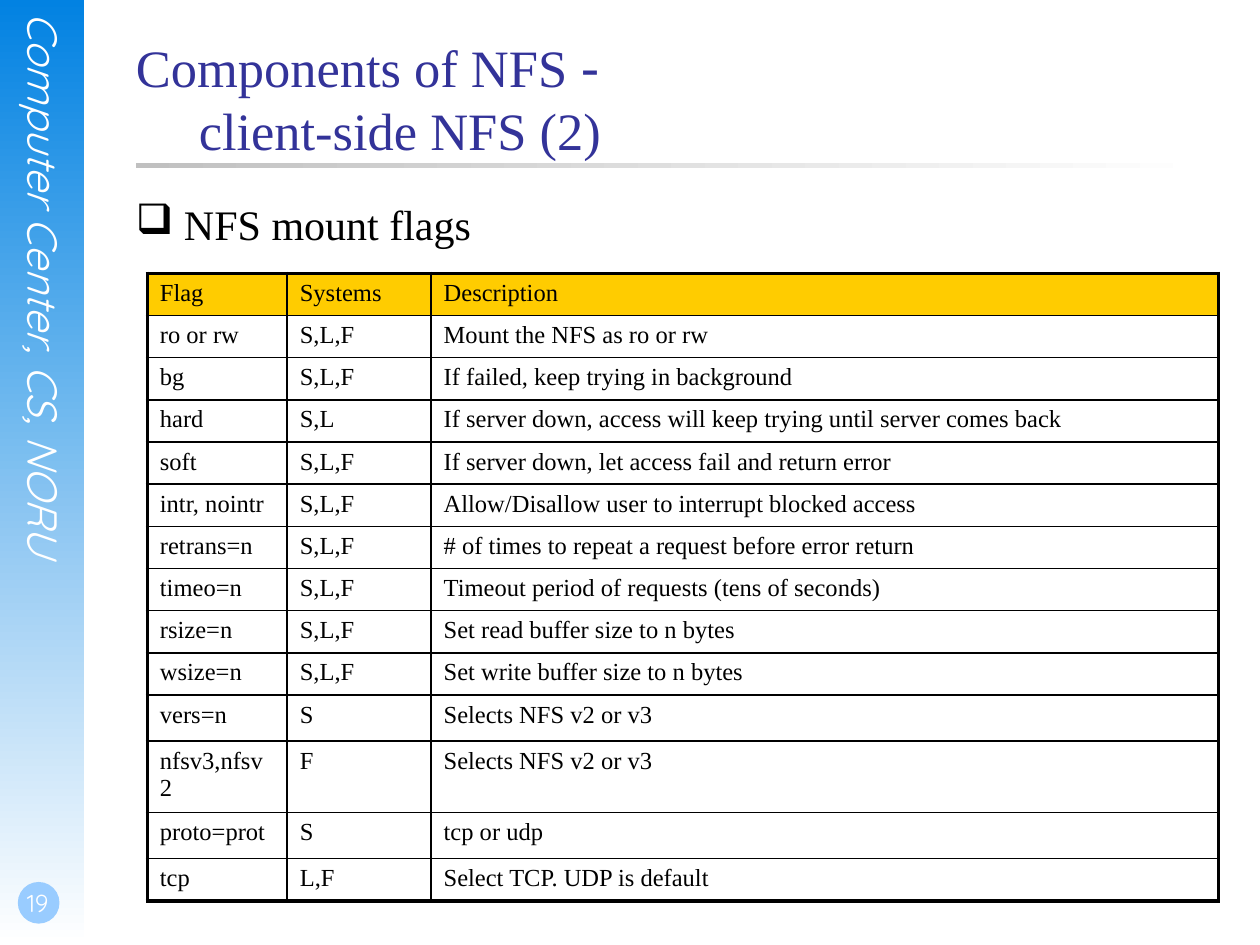
from lxml import etree
from pptx import Presentation
from pptx.dml.color import RGBColor
from pptx.enum.shapes import MSO_SHAPE
from pptx.enum.text import MSO_ANCHOR, PP_ALIGN
from pptx.oxml.ns import qn
from pptx.util import Cm, Pt

RECTANGLE = MSO_SHAPE.RECTANGLE
OVAL = MSO_SHAPE.OVAL
TOP = MSO_ANCHOR.TOP
BOTTOM = MSO_ANCHOR.BOTTOM
CENTER = PP_ALIGN.CENTER

BLACK = RGBColor(0x00, 0x00, 0x00)
WHITE = RGBColor(0xFF, 0xFF, 0xFF)
SIDEBAR_BLUE = RGBColor(0x02, 0x82, 0xE2)
BADGE_BLUE = RGBColor(0x99, 0xCC, 0xFF)
RULE_GRAY = RGBColor(0xC0, 0xC0, 0xC0)
TITLE_BLUE = RGBColor(0x33, 0x33, 0x99)
HEADER_GOLD = RGBColor(0xFF, 0xCC, 0x00)

SERIF = "Times New Roman"
SANS = "DejaVu Sans"
DISPLAY = "Quicksand"

THIN = Pt(1)
THICK = Pt(2.25)

COLUMN_WIDTHS = (2.82, 2.9, 15.87)
ROW_HEIGHT = 0.85
TALL_ROW_HEIGHT = 0.93
TALL_FLAGS = ("vers=n", "nfsv3,nfsv2", "proto=prot")
MOUNT_FLAGS = (
    ("Flag", "Systems", "Description"),
    ("ro or rw", "S,L,F", "Mount the NFS as ro or rw"),
    ("bg", "S,L,F", "If failed, keep trying in background"),
    ("hard", "S,L", "If server down, access will keep trying until server comes back"),
    ("soft", "S,L,F", "If server down, let access fail and return error"),
    ("intr, nointr", "S,L,F", "Allow/Disallow user to interrupt blocked access"),
    ("retrans=n", "S,L,F", "# of times to repeat a request before error return"),
    ("timeo=n", "S,L,F", "Timeout period of requests (tens of seconds)"),
    ("rsize=n", "S,L,F", "Set read buffer size to n bytes"),
    ("wsize=n", "S,L,F", "Set write buffer size to n bytes"),
    ("vers=n", "S", "Selects NFS v2 or v3"),
    ("nfsv3,nfsv2", "F", "Selects NFS v2 or v3"),
    ("proto=prot", "S", "tcp or udp"),
    ("tcp", "L,F", "Select TCP. UDP is default"),
)


def format_run(run, size, font, color):
    run.font.size = Pt(size)
    run.font.name = font
    run.font.color.rgb = color


def add_block(slide, preset, left, top, width, height):
    block = slide.shapes.add_shape(preset, Cm(left), Cm(top), Cm(width), Cm(height))
    block.shadow.inherit = False
    block.line.fill.background()
    return block


def fill_fade(block, start_color, angle):
    block.fill.gradient()
    block.fill.gradient_angle = angle
    for stop, color in zip(block.fill.gradient_stops, (start_color, WHITE)):
        stop.color.rgb = color


def add_text(slide, left, top, width, height, anchor=TOP):
    box = slide.shapes.add_textbox(Cm(left), Cm(top), Cm(width), Cm(height))
    frame = box.text_frame
    frame.word_wrap = True
    frame.vertical_anchor = anchor
    frame.margin_left = frame.margin_top = frame.margin_right = frame.margin_bottom = 0
    return frame


def add_sidebar(slide):
    sidebar = add_block(slide, RECTANGLE, 0, 0, 1.7, 19.05)
    fill_fade(sidebar, SIDEBAR_BLUE, 270)

    department = add_text(slide, 0.38, 0.25, 1.02, 12.98)
    department.text = "Computer Center, CS, NORU"
    department_run = department.paragraphs[0].runs[0]
    format_run(department_run, 24, DISPLAY, WHITE)
    department_run.font.italic = True
    department._txBody.bodyPr.set("vert", "eaVert")

    badge = add_block(slide, OVAL, 0.36, 17.78, 0.84, 0.84)
    badge.fill.solid()
    badge.fill.fore_color.rgb = BADGE_BLUE

    page_number = add_text(slide, 0, 17.35, 1.47, 1.27, BOTTOM)
    page_number.margin_left = Cm(0.05)
    page_number.margin_bottom = Cm(0.13)
    page_number.text = "19"
    page_number.paragraphs[0].alignment = CENTER
    format_run(page_number.paragraphs[0].runs[0], 14, DISPLAY, WHITE)


def add_title(slide):
    rule = add_block(slide, RECTANGLE, 2.74, 3.28, 21.59, 0.1)
    fill_fade(rule, RULE_GRAY, 0)

    title = add_text(slide, 2.74, 0.71, 21.59, 3.18)
    heading = title.paragraphs[0]
    heading.text = "Components of NFS "
    dash = heading.add_run()
    dash.text = "-"
    heading.add_line_break()
    subject = heading.add_run()
    subject.text = "\tclient-side NFS (2)"
    for run, font in zip(heading.runs, (SERIF, SANS, SERIF)):
        format_run(run, 30, font, TITLE_BLUE)


def add_topic(slide):
    topic = add_text(slide, 2.74, 4.01, 21.59, 12.9)
    topic.text = "NFS mount flags"
    line = topic.paragraphs[0]
    line.space_before = Pt(6)
    format_run(line.runs[0], 24, SERIF, BLACK)
    properties = line._p.get_or_add_pPr()
    properties.set("marL", str(Cm(0.97)))
    properties.set("indent", str(-Cm(0.97)))
    etree.SubElement(properties, qn("a:buChar"), char="❑")


def set_borders(cell, widths):
    properties = cell._tc.get_or_add_tcPr()
    for position, (side, width) in enumerate(zip("LRTB", widths)):
        border = etree.Element(qn(f"a:ln{side}"), w=str(width))
        paint = etree.SubElement(border, qn("a:solidFill"))
        etree.SubElement(paint, qn("a:srgbClr"), val=str(BLACK))
        properties.insert(position, border)


def add_flag_table(slide):
    heights = [TALL_ROW_HEIGHT if row[0] in TALL_FLAGS else ROW_HEIGHT for row in MOUNT_FLAGS]
    last_row = len(MOUNT_FLAGS) - 1
    last_column = len(COLUMN_WIDTHS) - 1
    table = slide.shapes.add_table(
        len(heights), len(COLUMN_WIDTHS), Cm(2.97), Cm(5.51),
        Cm(sum(COLUMN_WIDTHS)), Cm(sum(heights)),
    ).table
    for column, width in zip(table.columns, COLUMN_WIDTHS):
        column.width = Cm(width)

    for r, values in enumerate(MOUNT_FLAGS):
        table.rows[r].height = Cm(heights[r])
        for c, value in enumerate(values):
            cell = table.cell(r, c)
            cell.text = value
            run = cell.text_frame.paragraphs[0].runs[0]
            format_run(run, 14, SERIF, BLACK)
            run.font.bold = False
            if r == 0:
                cell.fill.solid()
                cell.fill.fore_color.rgb = HEADER_GOLD
            else:
                cell.fill.background()
            outer_sides = (c == 0, c == last_column, r == 0, r == last_row)
            set_borders(cell, [THICK if outer else THIN for outer in outer_sides])


def main():
    presentation = Presentation()
    presentation.slide_width = Cm(25.4)
    presentation.slide_height = Cm(19.05)
    slide = presentation.slides.add_slide(presentation.slide_layouts[6])
    add_sidebar(slide)
    add_title(slide)
    add_topic(slide)
    add_flag_table(slide)
    presentation.save("out.pptx")


if __name__ == "__main__":
    main()
